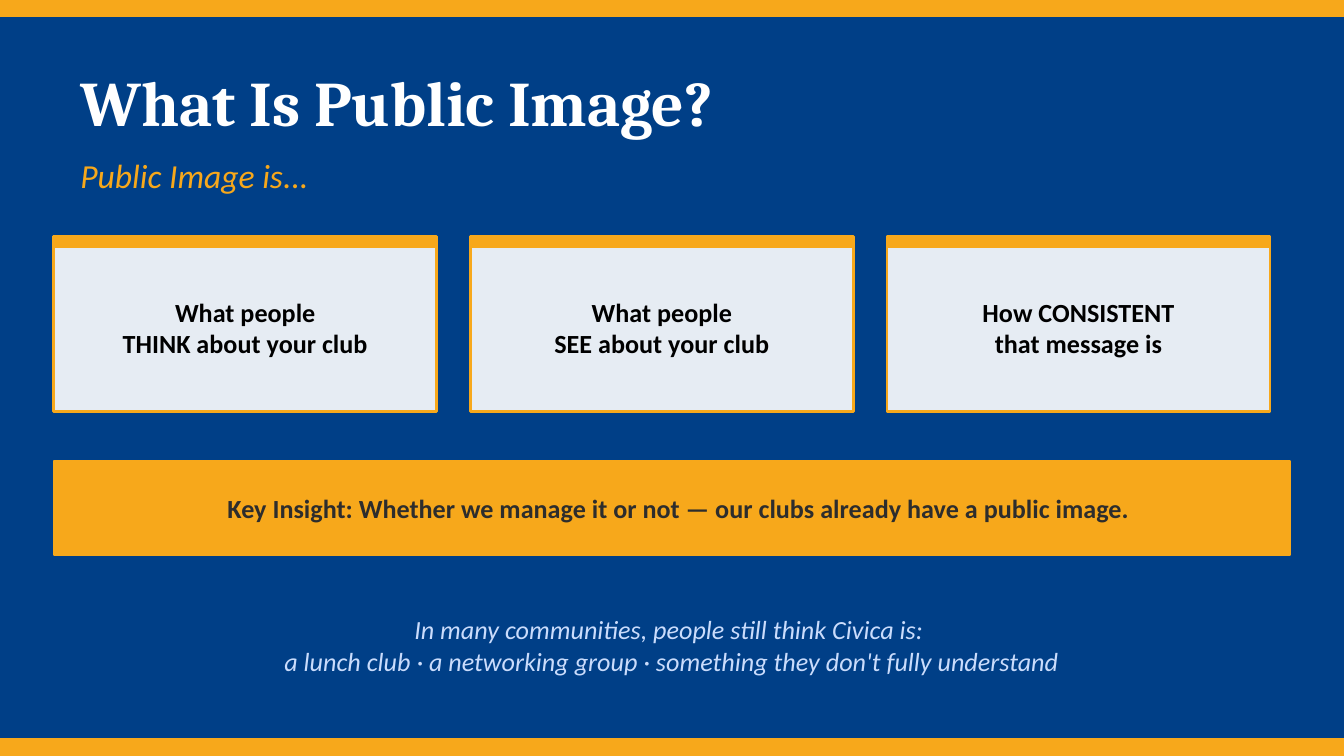
import lxml.etree
import pptx
import pptx.dml.color
import pptx.enum.shapes
import pptx.enum.text
import pptx.oxml.ns
import pptx.util

WIDE = 10
HIGH = WIDE * 9 / 16
EDGE, STEP, CARD = 0.4, 3.1, 2.85
TOP, BAND = 1.76, 0.12
INK = {
    "blue": "003F87",
    "gold": "F7A81B",
    "white": "FFFFFF",
    "black": "000000",
    "gray": "2D2D2D",
    "pale": "CADCFC",
}
LEFT = pptx.enum.text.PP_ALIGN.LEFT
MID = pptx.enum.text.PP_ALIGN.CENTER
TITLE = {"name": "Cambria", "size": pptx.util.Pt(34), "bold": True}
SUB = {"name": "Calibri", "size": pptx.util.Pt(18), "italic": True}
BOLD = {"name": "Calibri", "size": pptx.util.Pt(14), "bold": True}
NOTE = {"name": "Calibri", "size": pptx.util.Pt(14), "italic": True}
CARDS = [
    ["What people", "THINK about your club"],
    ["What people", "SEE about your club"],
    ["How CONSISTENT", "that message is"],
]


def tint(name):
    """Return the named colour."""
    return pptx.dml.color.RGBColor.from_string(INK[name])


def place(box):
    """Turn a box in inches into slide lengths."""
    return [pptx.util.Inches(size) for size in box]


def add_box(slide, box, fill="gold", line=1, alpha=None):
    """Draw a filled rectangle with a gold line."""
    kind = pptx.enum.shapes.MSO_SHAPE.RECTANGLE
    shape = slide.shapes.add_shape(kind, *place(box))
    shape.shadow.inherit = False
    shape.fill.solid()
    shape.fill.fore_color.rgb = tint(fill)
    shape.line.color.rgb = tint("gold")
    shape.line.width = pptx.util.Pt(line)
    if alpha:
        name = pptx.oxml.ns.qn
        solid = shape._element.spPr.find(name("a:solidFill"))
        part = lxml.etree.SubElement(solid[0], name("a:alpha"))
        part.set("val", str(alpha * 1000))


def add_text(slide, box, lines, style, ink, align=MID):
    """Write one paragraph per line, centred from top to bottom."""
    frame = slide.shapes.add_textbox(*place(box)).text_frame
    frame.word_wrap = True
    frame.vertical_anchor = pptx.enum.text.MSO_ANCHOR.MIDDLE
    frame.text = "\n".join(lines)
    for para in frame.paragraphs:
        para.alignment = align
        font = para.runs[0].font
        font.color.rgb = tint(ink)
        for key, value in style.items():
            setattr(font, key, value)


def add_card(slide, col, lines):
    """Draw a card with a gold top edge in the given column."""
    left = EDGE + col * STEP
    add_box(slide, (left, TOP, CARD, 1.3), "white", 1.5, 90)
    add_box(slide, (left, TOP, CARD, 0.08))
    add_text(slide, (left, TOP + 0.15, CARD, 1.05), lines, BOLD, "black")


def main():
    """Build the slide and save it."""
    deck = pptx.Presentation()
    deck.slide_width, deck.slide_height = place((WIDE, HIGH))
    slide = deck.slides.add_slide(deck.slide_layouts[6])
    slide.background.fill.solid()
    slide.background.fill.fore_color.rgb = tint("blue")

    add_box(slide, (0, 0, WIDE, BAND))
    add_text(slide, (0.5, 0.4, 9, 0.7), ["What Is Public Image?"],
             TITLE, "white", LEFT)
    add_text(slide, (0.5, 1.1, 9, 0.4), ["Public Image is..."],
             SUB, "gold", LEFT)
    for col, lines in enumerate(CARDS):
        add_card(slide, col, lines)

    add_box(slide, (EDGE, 3.43, WIDE - 2 * EDGE, 0.7))
    add_text(slide, (0.55, 3.5, 9, 0.56),
             ["Key Insight: Whether we manage it or not — "
              "our clubs already have a public image."], BOLD, "gray")
    add_text(slide, (0.5, 4.5, 9, 0.6),
             ["In many communities, people still think Civica is: ",
              "a lunch club · a networking group · "
              "something they don't fully understand"], NOTE, "pale")
    add_box(slide, (0, 5.5, WIDE, BAND))
    deck.save("out.pptx")


if __name__ == "__main__":
    main()
